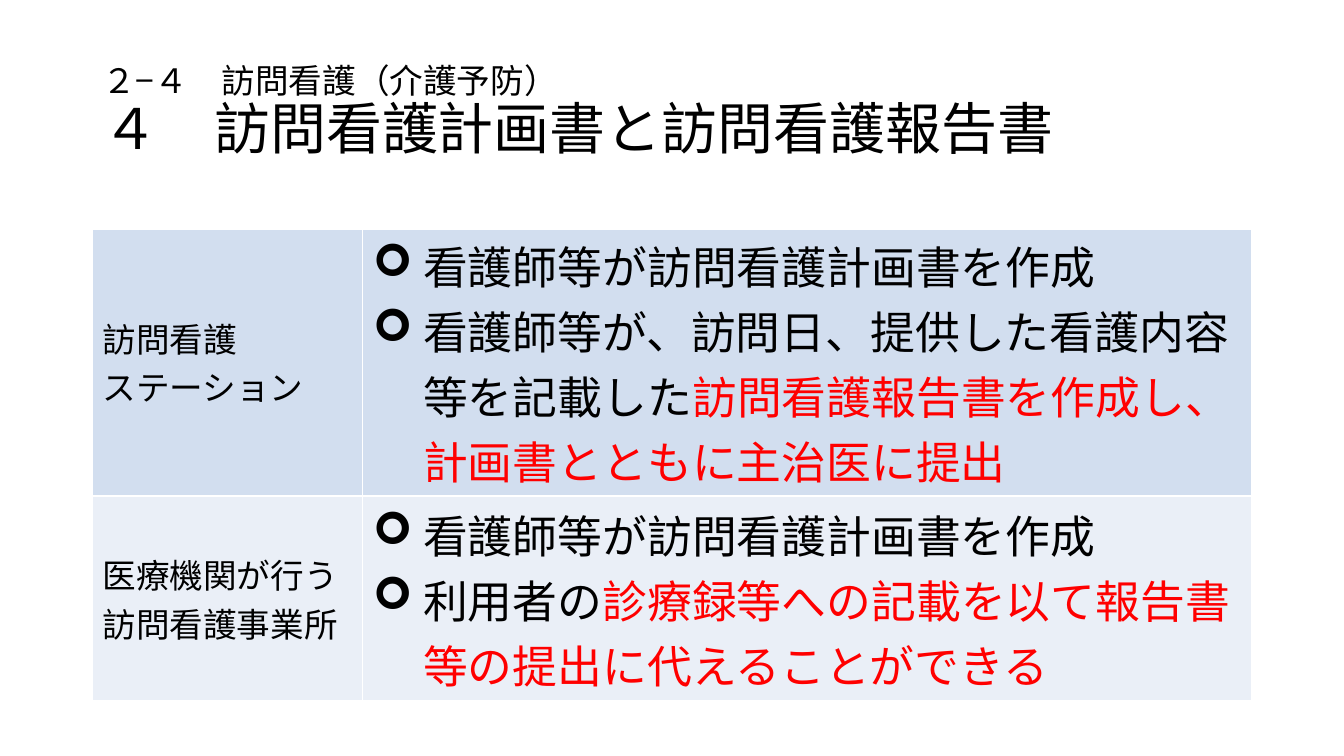
from lxml import etree
from pptx import Presentation
from pptx.dml.color import RGBColor
from pptx.enum.text import MSO_ANCHOR as Anchor
from pptx.oxml.ns import qn
from pptx.util import Cm, Pt

BLACK = RGBColor(0x00, 0x00, 0x00)
RED = RGBColor(0xFF, 0x00, 0x00)
WHITE = RGBColor(0xFF, 0xFF, 0xFF)
BLUE = RGBColor(0xD2, 0xDE, 0xEF)
PALE_BLUE = RGBColor(0xEA, 0xEF, 0xF7)

HEADING = [("２−４　訪問看護（介護予防）", 24), ("４　訪問看護計画書と訪問看護報告書", 40)]
PLAN = [("看護師等が訪問看護計画書を作成", BLACK)]
# Each row: height in cm, fill, provider lines, bulleted duties as coloured runs
PROVIDERS = [
    (6.76, BLUE, ["訪問看護", "ステーション"],
     [PLAN, [("看護師等が、訪問日、提供した看護内容等を記載した", BLACK),
             ("訪問看護報告書を作成し、計画書とともに主治医に提出", RED)]]),
    (5.16, PALE_BLUE, ["医療機関が行う訪問看護事業所"],
     [PLAN, [("利用者の", BLACK),
             ("診療録等への記載を以て報告書等の提出に代えることができる", RED)]]),
]
HEADER_HEIGHT = 1.04
PROVIDER_WIDTH = 6.81


def add_run(p, text, size, font, color=BLACK):
    r = p.add_run()
    r.text = text
    r.font.size = Pt(size)
    r.font.name = font
    r.font.color.rgb = color


def add_bullet(p):
    pPr = p._p.get_or_add_pPr()
    pPr.set("marL", str(Cm(1.27)))
    pPr.set("indent", str(-Cm(1.27)))
    etree.SubElement(pPr, qn("a:buFont"), typeface="Wingdings")
    etree.SubElement(pPr, qn("a:buChar"), char="➢")


def set_borders(cell, bottom=1):
    tcPr = cell._tc.get_or_add_tcPr()
    for side, width in (("L", 1), ("R", 1), ("T", 1), ("B", bottom)):
        ln = etree.SubElement(tcPr, qn(f"a:ln{side}"), w=str(Pt(width)))
        fill = etree.SubElement(ln, qn("a:solidFill"))
        etree.SubElement(fill, qn("a:srgbClr"), val=str(WHITE))


def fill_cell(cell, paragraphs, size, font, color, bulleted=False):
    set_borders(cell)
    cell.fill.solid()
    cell.fill.fore_color.rgb = color
    cell.vertical_anchor = Anchor.MIDDLE
    tf = cell.text_frame
    for i, runs in enumerate(paragraphs):
        p = tf.add_paragraph() if i else tf.paragraphs[0]
        if bulleted:
            add_bullet(p)
        for text, run_color in runs:
            add_run(p, text, size, font, run_color)


def add_heading(s, left, top, width, height):
    tf = s.shapes.add_textbox(left, top, width, height).text_frame
    tf.word_wrap = True
    tf.vertical_anchor = Anchor.MIDDLE
    p = tf.paragraphs[0]
    p.line_spacing = 0.9
    for i, (text, size) in enumerate(HEADING):
        if i:
            p.add_line_break()
        add_run(p, text, size, "Calibri")


def add_provider_table(s, left, top, width):
    heights = [Cm(HEADER_HEIGHT)] + [Cm(row[0]) for row in PROVIDERS]
    table = s.shapes.add_table(len(heights), 2, left, top, width, sum(heights)).table
    table.first_row = table.horz_banding = False
    table.columns[0].width = Cm(PROVIDER_WIDTH)
    table.columns[1].width = width - Cm(PROVIDER_WIDTH)
    for row, height in zip(table.rows, heights):
        row.height = height
    for cell in table.rows[0].cells:
        set_borders(cell, bottom=3)
        cell.fill.background()
    for i, (_, color, names, duties) in enumerate(PROVIDERS, 1):
        lines = [[(name, BLACK)] for name in names]
        fill_cell(table.cell(i, 0), lines, 24, "Calibri", color)
        fill_cell(table.cell(i, 1), duties, 32, "Arial", color, bulleted=True)


def main():
    prs = Presentation()
    prs.slide_width, prs.slide_height = Cm(33.87), Cm(19.05)
    s = prs.slides.add_slide(prs.slide_layouts[6])
    left, width = Cm(2.33), Cm(29.21)
    add_heading(s, left, Cm(1.01), width, Cm(3.68))
    add_provider_table(s, left, Cm(4.7), width)
    prs.save("out.pptx")


if __name__ == "__main__":
    main()
